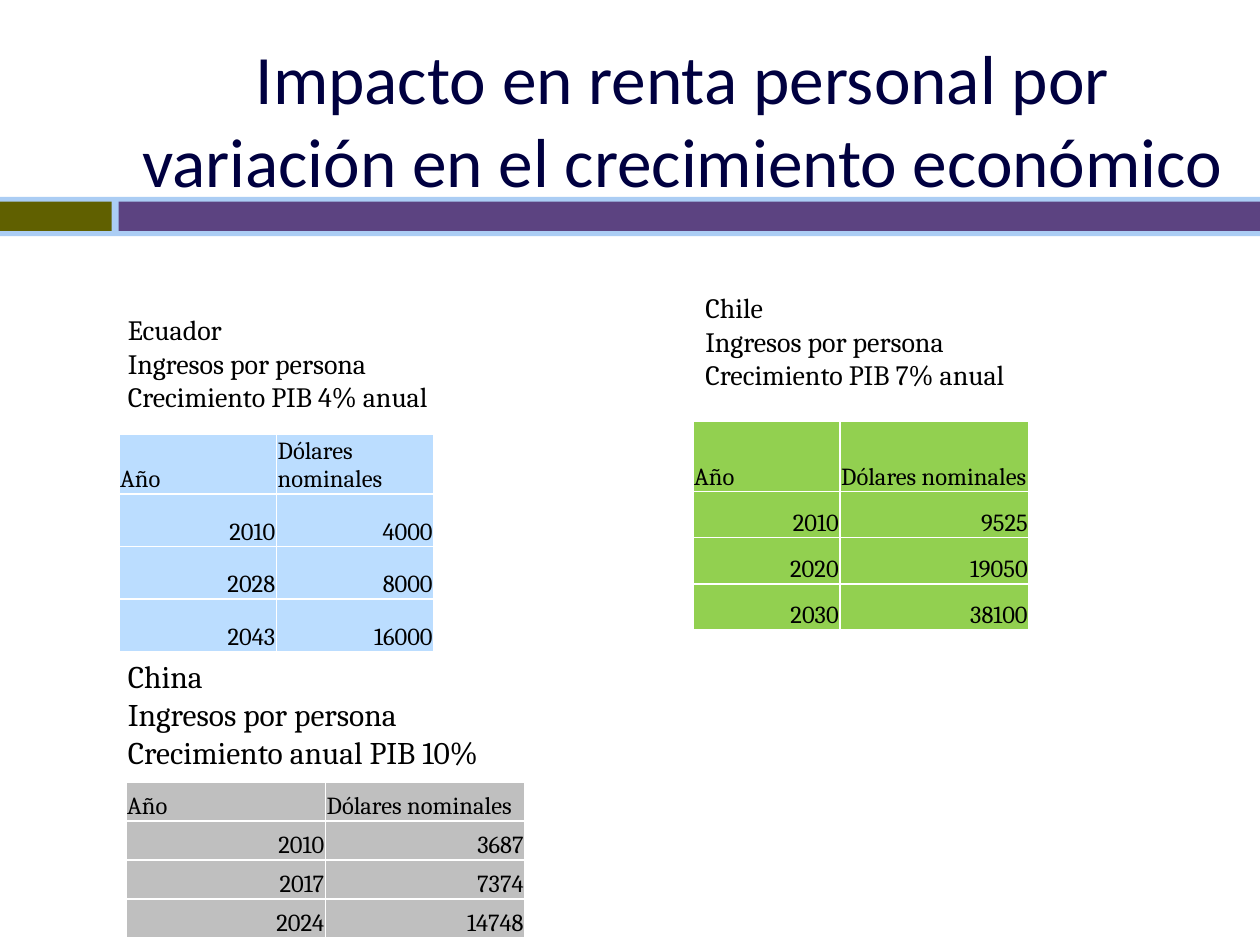
from lxml.etree import SubElement
from pptx import Presentation
from pptx.dml.color import RGBColor
from pptx.enum.shapes import MSO_SHAPE
from pptx.enum.text import MSO_ANCHOR, MSO_AUTO_SIZE, PP_ALIGN
from pptx.oxml.ns import qn
from pptx.util import Inches, Pt

COLS, ROWS = 120, 90
WIDE, HIGH = Inches(10), Inches(7.5)
HUES = {
    "title": "000040", "text": "000000", "line": "FFFFFF",
    "band": "ABCDF4", "olive": "606000", "plum": "5C4381",
    "sky": "BBDDFF", "lime": "92D050", "gray": "BFBFBF",
}
HEAD = ("Año", "Dólares nominales")
INSET = {"margin_left": Inches(0.01), "margin_right": Inches(0.01),
         "margin_top": Inches(0.01), "margin_bottom": 0,
         "vertical_anchor": MSO_ANCHOR.BOTTOM}


def hue(name):
    """Return the named colour."""
    return RGBColor.from_string(HUES[name])


def grid(left, top, wide, high):
    """Turn grid columns and rows into slide lengths."""
    col, row = WIDE / COLS, HIGH / ROWS
    return [round(n) for n in (left * col, top * row, wide * col, high * row)]


def apply(item, form):
    """Set every attribute listed in a format dict."""
    for key, value in form.items():
        setattr(item, key, value)


def style(par, name, size, tint="text", align=PP_ALIGN.LEFT):
    """Format one paragraph."""
    apply(par, {"alignment": align})
    apply(par.font, {"name": name, "size": Pt(size), "bold": False})
    par.font.color.rgb = hue(tint)


def add_bars(slide, box):
    """Draw the divider band with its two blocks."""
    left, top, wide, high = box
    inner, tall, split, gap = top + 0.45, high - 0.95, 10.65, 0.65
    start = left + split + gap
    bars = (("band", box), ("olive", (left, inner, split, tall)),
            ("plum", (start, inner, wide - split - gap, tall)))
    for tint, area in bars:
        bar = slide.shapes.add_shape(MSO_SHAPE.RECTANGLE, *grid(*area))
        bar.shadow.inherit = False
        bar.fill.solid()
        bar.fill.fore_color.rgb = hue(tint)
        bar.line.fill.background()


def add_title(slide, box, text):
    """Fill and place the title."""
    title = slide.shapes.title
    apply(title, dict(zip(("left", "top", "width", "height"), grid(*box))))
    frame = title.text_frame
    frame.text = text
    apply(frame, {"word_wrap": True, "auto_size": MSO_AUTO_SIZE.NONE,
                  "vertical_anchor": MSO_ANCHOR.MIDDLE})
    style(frame.paragraphs[0], "Calibri", 39.6, "title", PP_ALIGN.CENTER)


def add_edge(cell):
    """Give a cell thin borders on all sides."""
    props = cell._tc.get_or_add_tcPr()
    for spot, side in enumerate(("lnL", "lnR", "lnT", "lnB")):
        line = SubElement(props, qn(f"a:{side}"), w=str(Pt(1)))
        fill = SubElement(line, qn("a:solidFill"))
        SubElement(fill, qn("a:srgbClr"), val=HUES["line"])
        props.insert(spot, line)


def add_table(slide, spot, cols, rows, data, tint):
    """Draw a table of years and incomes."""
    box = grid(*spot, sum(cols), sum(rows))
    table = slide.shapes.add_table(len(rows), len(cols), *box).table
    apply(table, {"first_row": False, "horz_banding": False})
    for col, wide in zip(table.columns, cols):
        col.width = round(wide * WIDE / COLS)
    for row, high in zip(table.rows, rows):
        row.height = round(high * HIGH / ROWS)
    for r, line in enumerate((HEAD, *data)):
        for c, value in enumerate(line):
            cell = table.cell(r, c)
            cell.text = str(value)
            apply(cell, INSET)
            cell.fill.solid()
            cell.fill.fore_color.rgb = hue(tint)
            add_edge(cell)
            align = PP_ALIGN.RIGHT if r else PP_ALIGN.LEFT
            style(cell.text_frame.paragraphs[0], "Cambria", 14, align=align)


def add_panel(slide, box, lines, size, shift, cols, rows, data, tint):
    """Place a country caption with its table below."""
    frame = slide.shapes.add_textbox(*grid(*box)).text_frame
    frame.word_wrap = True
    frame.text = "\n".join(lines)
    for par in frame.paragraphs:
        style(par, "Cambria", size)
    spot = box[0] + shift[0], box[1] + shift[1]
    add_table(slide, spot, cols, rows, data, tint)


def main():
    """Build and save the slide."""
    deck = Presentation()
    apply(deck, {"slide_width": WIDE, "slide_height": HIGH})
    slide = deck.slides.add_slide(deck.slide_layouts[5])
    add_bars(slide, (0, 18.75, COLS, 3.75))
    add_title(slide, (11, 3.75, 108, 15),
              "Impacto en renta personal por variación en el crecimiento económico")
    income = "Ingresos por persona"
    add_panel(slide, (11, 29.2, 55, 14.2),
              ("Ecuador", income, "Crecimiento PIB 4% anual"), 16,
              (0.33, 12.13), (15, 15), [5] * 4,
              ((2010, 4000), (2028, 8000), (2043, 16000)), "sky")
    add_panel(slide, (66, 27.1, 55, 10.95),
              ("Chile", income, "Crecimiento PIB 7% anual"), 16,
              (0, 13), (14, 18), [6.7] + [4.4] * 3,
              ((2010, 9525), (2020, 19050), (2030, 38100)), "lime")
    add_panel(slide, (11, 62, 39, 12.1),
              ("China", income, "Crecimiento anual PIB 10%"), 18,
              (1, 12.5), (19, 19), [3.7] * 4,
              ((2010, 3687), (2017, 7374), (2024, 14748)), "gray")
    deck.save("out.pptx")


if __name__ == "__main__":
    main()
